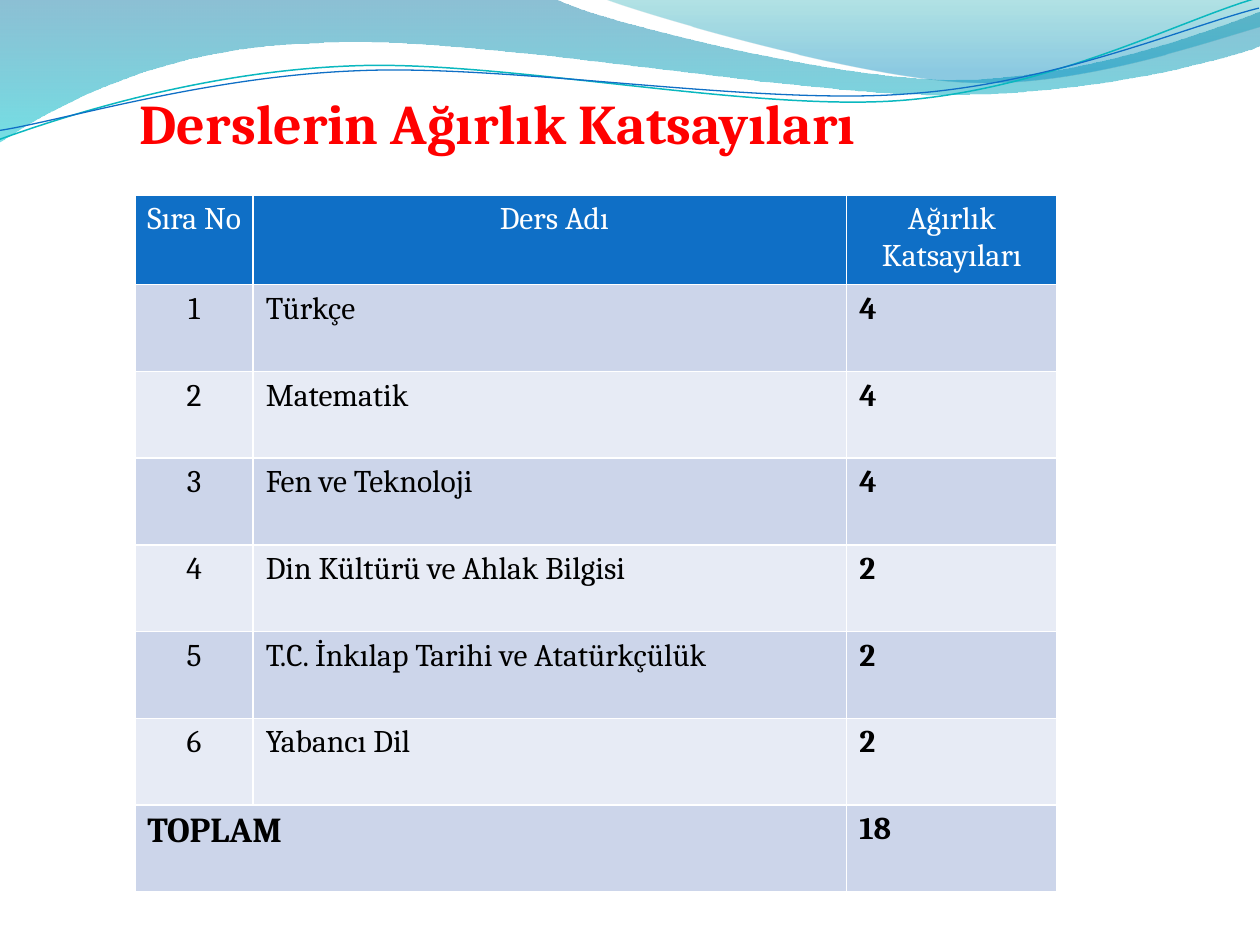
from lxml import etree
from pptx import Presentation
from pptx.dml.color import RGBColor
from pptx.enum.text import PP_ALIGN
from pptx.oxml.ns import qn
from pptx.util import Inches, Pt

LEFT, CENTER = PP_ALIGN.LEFT, PP_ALIGN.CENTER
FONT = "Cambria"
WHITE = RGBColor(0xFF, 0xFF, 0xFF)
BLACK = RGBColor(0, 0, 0)
RED = RGBColor(0xFF, 0, 0)
BLUE = RGBColor(0x0F, 0x6F, 0xC6)
TEAL = RGBColor(0x0A, 0xB8, 0xBF)
DEEP = RGBColor(0x00, 0x74, 0xA1)
CYAN = RGBColor(0x00, 0xC6, 0xCF)
SEA = RGBColor(0x00, 0xA1, 0xA9)
SKY = RGBColor(0x00, 0x8B, 0xBF)
BANDS = (RGBColor(0xCC, 0xD5, 0xEA), RGBColor(0xE7, 0xEB, 0xF5))
TILT = 357.3

# Each outline is a start point, then line ends (2 numbers) or curves (6)
WAVE = [(0, 0), (4.4, -0.01), (4.76, 0.17, 6.64, 0.63, 7.58, 0.63),
        (8.53, 0.63, 9.58, 0.26, 10, 0.09), (10.01, 0.36),
        (9.83, 0.44, 8.7, 0.76, 7.46, 0.75),
        (6.22, 0.75, 3.82, 0.28, 2.57, 0.34),
        (1.29, 0.36, 0.46, 0.83, -0.01, 1.13)]
CREST = [(4.79, -0.01), (5.09, 0.11, 6.82, 0.62, 7.69, 0.65),
         (8.56, 0.69, 9.61, 0.32, 10, 0.21), (10, 0)]
# The two thin curves are given before their tilt
UPPER = [(-0.02, 0.87), (0.47, 0.72, 1.58, 0.41, 2.78, 0.42),
         (3.96, 0.42, 5.91, 0.93, 7.12, 0.9),
         (8.32, 0.87, 9.4, 0.36, 10, 0.22)]
LOWER = [(-0.02, 0.8), (0.46, 0.75, 1.64, 0.45, 2.83, 0.46),
         (4.03, 0.46, 5.96, 0.88, 7.16, 0.85),
         (8.35, 0.83, 9.42, 0.42, 10.01, 0.3)]

HEADS = ("Sıra No", "Ders Adı", "Ağırlık Katsayıları")
LESSONS = (("Türkçe", 4), ("Matematik", 4), ("Fen ve Teknoloji", 4),
           ("Din Kültürü ve Ahlak Bilgisi", 2),
           ("T.C. İnkılap Tarihi ve Atatürkçülük", 2), ("Yabancı Dil", 2))
WIDTHS = (0.94, 4.71, 1.67)
HEIGHT, HEAD_H = 5.53, 0.71


def add_path(slide, outline, close):
    points = [(Inches(part[i]), Inches(part[i + 1]))
              for part in outline for i in range(0, len(part), 2)]
    pen = slide.shapes.build_freeform(*points[0])
    pen.add_line_segments(points[1:], close=close)
    shape = pen.convert_to_shape()
    shape.shadow.inherit = False

    # Join each three points of a curve into one cubic segment
    moves = iter(list(shape.element.iter(qn("a:lnTo"))))
    for part in outline[1:]:
        move = next(moves)
        if len(part) == 6:
            move.addprevious(etree.Element(qn("a:cubicBezTo")))
            curve = move.getprevious()
            for step in (move, next(moves), next(moves)):
                curve.append(step[0])
                step.getparent().remove(step)
    return shape


def add_wave(slide, outline, stops):
    shape = add_path(slide, outline, True)
    shape.line.fill.background()
    shape.fill.gradient()
    shape.fill.gradient_angle = 270
    for stop, (place, color, alpha) in zip(shape.fill.gradient_stops, stops):
        stop.position = place
        stop.color.rgb = color
    tones = shape.element.spPr.iter(qn("a:srgbClr"))
    for tone, (place, color, alpha) in zip(tones, stops):
        etree.SubElement(tone, qn("a:alpha"), val=str(alpha * 1000))


def add_curve(slide, outline, color, width):
    shape = add_path(slide, outline, False)
    shape.rotation = TILT
    shape.fill.background()
    shape.line.color.rgb = color
    shape.line.width = Pt(width)


def style(frame, size, color, bold=False, align=LEFT):
    para = frame.paragraphs[0]
    para.alignment = align
    for run in para.runs:
        font = run.font
        font.name, font.size, font.bold = FONT, Pt(size), bold
        font.color.rgb = color


def set_cell(cell, text, fill, color=BLACK, size=18, bold=False, align=LEFT):
    cell.text_frame.text = text
    style(cell.text_frame, size, color, bold, align)
    # Borders come before the fill in the cell properties
    props = cell._tc.get_or_add_tcPr()
    for side in "LRTB":
        line = etree.SubElement(props, qn("a:ln" + side), w=str(Pt(1)))
        solid = etree.SubElement(line, qn("a:solidFill"))
        etree.SubElement(solid, qn("a:srgbClr"), val=str(WHITE))
    cell.fill.solid()
    cell.fill.fore_color.rgb = fill


def add_grid(slide):
    last = len(LESSONS) + 1
    grid = slide.shapes.add_table(
        last + 1, len(WIDTHS), Inches(1.07), Inches(1.55),
        Inches(sum(WIDTHS)), Inches(HEIGHT)).table
    for col, width in zip(grid.columns, WIDTHS):
        col.width = Inches(width)
    for row in grid.rows:
        row.height = Inches((HEIGHT - HEAD_H) / last)
    grid.rows[0].height = Inches(HEAD_H)

    # Header
    for col, head in enumerate(HEADS):
        set_cell(grid.cell(0, col), head, BLUE, WHITE,
                 align=CENTER if col else LEFT)
    grid.cell(0, 0).margin_right = Inches(0.05)
    grid.cell(0, 1).margin_left = Inches(0.17)

    # Lessons
    for row, (name, weight) in enumerate(LESSONS, 1):
        band = BANDS[(row - 1) % 2]
        set_cell(grid.cell(row, 0), str(row), band, align=CENTER)
        set_cell(grid.cell(row, 1), name, band)
        set_cell(grid.cell(row, 2), str(weight), band, bold=True)

    # Total
    grid.cell(last, 0).merge(grid.cell(last, 1))
    total = sum(weight for name, weight in LESSONS)
    set_cell(grid.cell(last, 0), "TOPLAM", BANDS[0], size=20, bold=True)
    set_cell(grid.cell(last, 2), str(total), BANDS[0], bold=True)


def add_title(slide, text):
    box = slide.shapes.add_textbox(Inches(0.91), Inches(0.6),
                                   Inches(7.17), Inches(0.71))
    frame = box.text_frame
    frame.word_wrap = True
    frame.margin_left, frame.margin_top = Inches(0.2), Inches(0.1)
    frame.text = text
    style(frame, 32, RED, bold=True)


def main():
    deck = Presentation()
    deck.slide_width, deck.slide_height = Inches(10), Inches(7.5)
    slide = deck.slides.add_slide(deck.slide_layouts[6])

    # Waves along the top
    add_wave(slide, WAVE, ((0, DEEP, 45), (1, CYAN, 55)))
    add_wave(slide, CREST, ((0, SEA, 30), (0.8, SKY, 45)))
    add_curve(slide, UPPER, TEAL, 0.85)
    add_curve(slide, LOWER, BLUE, 0.75)

    # Content
    add_grid(slide)
    add_title(slide, "Derslerin Ağırlık Katsayıları")
    deck.save("out.pptx")


if __name__ == "__main__":
    main()
